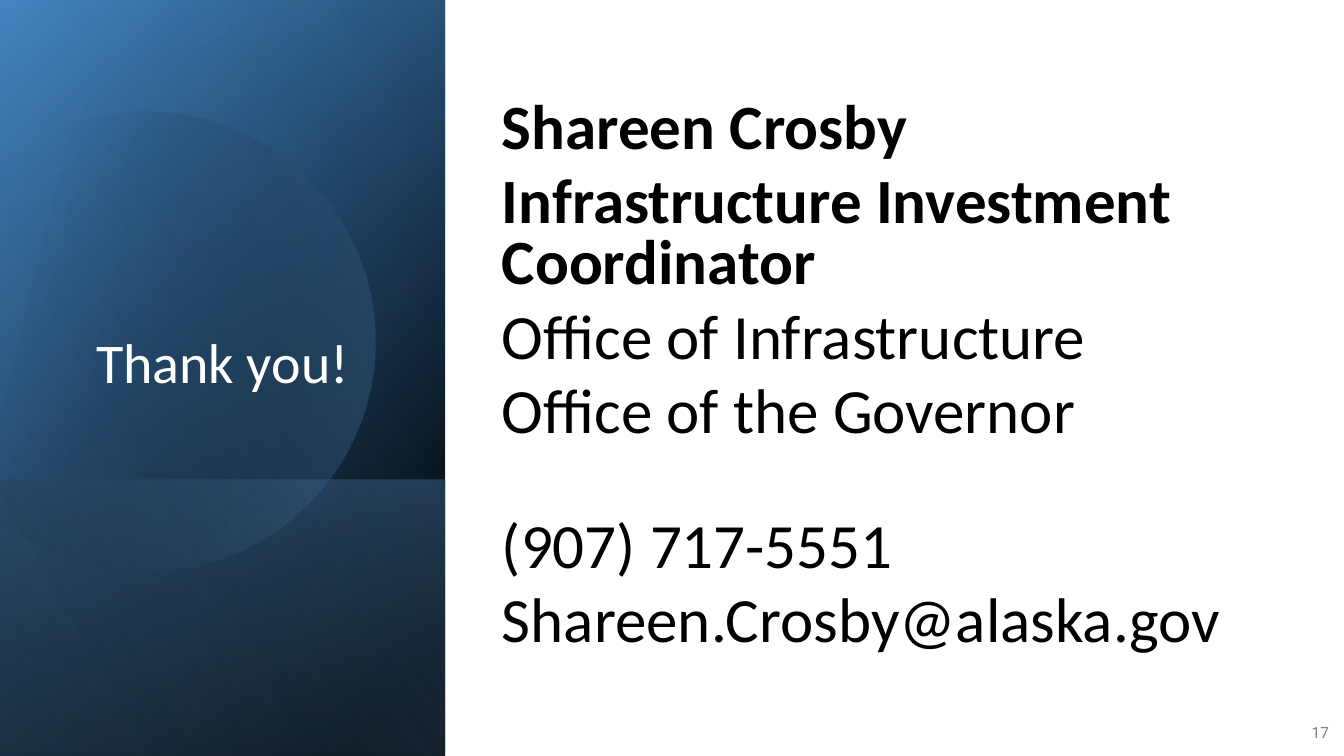
from math import cos, radians, sin

from lxml import etree
from pptx import Presentation
from pptx.dml.color import RGBColor
from pptx.enum.shapes import MSO_SHAPE
from pptx.enum.text import MSO_ANCHOR, MSO_AUTO_SIZE, PP_ALIGN
from pptx.oxml.ns import qn
from pptx.util import Pt

RECT = MSO_SHAPE.RECTANGLE
MIDDLE, BOTTOM = MSO_ANCHOR.MIDDLE, MSO_ANCHOR.BOTTOM
LEFT, CENTER, RIGHT = PP_ALIGN.LEFT, PP_ALIGN.CENTER, PP_ALIGN.RIGHT
NO_AUTOFIT = MSO_AUTO_SIZE.NONE
TITLE_ONLY = 5

BLACK = RGBColor(0x00, 0x00, 0x00)
WHITE = RGBColor(0xFF, 0xFF, 0xFF)
GRAY = RGBColor(0x80, 0x80, 0x80)
DEEP_BLUE = RGBColor(0x2E, 0x75, 0xB6)
BLUE = RGBColor(0x5B, 0x9B, 0xD5)
PALE_BLUE = RGBColor(0x9D, 0xC3, 0xE6)

EMU_PER_PX = 914400 / 100.8
SLIDE_W, SLIDE_H = 1344, 756
SIDEBAR_W = 445
BAND_TOP = 480

# top of panel, gradient stops (percent, colour, opacity percent), angle
BASE_PANELS = [
    (0, [(8, BLACK, 100), (100, DEEP_BLUE, 100)], 50),
    (0, [(0, BLACK, 0), (99, BLUE, 46)], 30),
    (BAND_TOP, [(2, BLUE, 29), (100, BLACK, 30)], 130),
]
GLAZE_PANEL = (0, [(0, BLACK, 0), (99, PALE_BLUE, 11)], 120)

DISC_RADIUS = 230
DISC_ANGLES = [-118, -90, 0, 90, 150]
DISC_STOPS = [(29, BLACK, 0), (100, BLUE, 43)]

# text, bold, space before in points
CONTACT_LINES = [
    ("Shareen Crosby", True, 10),
    ("Infrastructure Investment Coordinator", True, 10),
    ("Office of Infrastructure", False, 10),
    ("Office of the Governor", False, 10),
    ("(907) 717-5551", False, 53),
    ("Shareen.Crosby@alaska.gov", False, 10),
]


def px(length):
    return round(length * EMU_PER_PX)


def apply(target, values):
    for name, value in values.items():
        setattr(target, name, value)


def place(shape, left, top, width, height):
    apply(shape, {"left": px(left), "top": px(top),
                  "width": px(width), "height": px(height)})


def set_plain(shape):
    shape.shadow.inherit = False
    shape.line.fill.background()


def set_gradient(shape, stops, angle):
    """Fill with a linear gradient whose stops have their own opacity."""
    shape.fill.gradient()
    grad = shape._element.spPr.find(qn("a:gradFill"))
    grad.set("rotWithShape", "1")
    for child in list(grad):
        grad.remove(child)
    stop_list = etree.SubElement(grad, qn("a:gsLst"))
    for percent, color, opacity in stops:
        stop = etree.SubElement(stop_list, qn("a:gs"), pos=str(percent * 1000))
        rgb = etree.SubElement(stop, qn("a:srgbClr"), val=str(color))
        if opacity < 100:
            etree.SubElement(rgb, qn("a:alpha"), val=str(opacity * 1000))
    etree.SubElement(grad, qn("a:lin"), ang=str(angle * 60000), scaled="0")


def add_background(slide):
    background = slide.shapes.add_shape(RECT, 0, 0, px(SLIDE_W), px(SLIDE_H))
    set_plain(background)
    background.fill.solid()
    background.fill.fore_color.rgb = WHITE


def add_sidebar_panel(slide, top, stops, angle):
    """Add a mirrored, quarter-turned panel from top to the slide's foot."""
    length = SLIDE_H - top
    panel = slide.shapes.add_shape(RECT, 0, 0, 0, 0)
    place(panel, (SIDEBAR_W - length) / 2, top + (length - SIDEBAR_W) / 2,
          length, SIDEBAR_W)
    panel.rotation = 90
    panel._element.spPr.xfrm.set("flipH", "1")
    set_plain(panel)
    set_gradient(panel, stops, angle)


def bend_sides(shape, radius, angles):
    """Turn the sides between the given angles into arcs of one circle."""
    sides = list(shape._element.iter(qn("a:lnTo")))
    for side, start, end in zip(sides, angles, angles[1:]):
        arc = etree.Element(qn("a:arcTo"), wR=str(radius), hR=str(radius),
                            stAng=str(start % 360 * 60000),
                            swAng=str((end - start) * 60000))
        side.getparent().replace(side, arc)


def add_disc(slide):
    """Add the circle cut by a chord, tilted so that the chord is upright."""
    radius = px(DISC_RADIUS)
    corners = [(round(radius * cos(radians(a))), round(radius * sin(radians(a))))
               for a in DISC_ANGLES]
    builder = slide.shapes.build_freeform(*corners[0])
    builder.add_line_segments(corners[1:], close=True)
    disc = builder.convert_to_shape()
    bend_sides(disc, radius, DISC_ANGLES)
    place(disc, -55, 107, 430, 460)
    disc.rotation = 343.9
    set_plain(disc)
    set_gradient(disc, DISC_STOPS, 30)


def set_frame(shape, anchor):
    apply(shape.text_frame, {"word_wrap": True, "auto_size": NO_AUTOFIT,
                             "vertical_anchor": anchor})


def write_line(paragraph, text, color, font, spacing):
    run = paragraph.add_run()
    run.text = text
    run.font.color.rgb = color
    apply(run.font, font)
    apply(paragraph, spacing)


def add_title(slide):
    title = slide.shapes.title
    slide.shapes._spTree.append(title._element)
    place(title, 46, 198, 353, 203)
    set_frame(title, BOTTOM)
    write_line(title.text_frame.paragraphs[0], "Thank you!", WHITE,
               {"name": "Calibri", "size": Pt(40)},
               {"alignment": CENTER, "line_spacing": 0.9})


def add_contact(slide):
    contact = slide.shapes.add_textbox(0, 0, 0, 0)
    place(contact, 492, 72, 762, 612)
    set_frame(contact, MIDDLE)
    frame = contact.text_frame
    for index, (text, bold, before) in enumerate(CONTACT_LINES):
        paragraph = frame.add_paragraph() if index else frame.paragraphs[0]
        write_line(paragraph, text, BLACK,
                   {"name": "Calibri", "size": Pt(45), "bold": bold},
                   {"alignment": LEFT, "line_spacing": 0.8,
                    "space_before": Pt(before)})


def add_page_number(slide):
    number = slide.shapes.add_textbox(0, 0, 0, 0)
    place(number, 1290, 712, 49, 40)
    set_frame(number, MIDDLE)
    write_line(number.text_frame.paragraphs[0], "17", GRAY,
               {"name": "Roboto", "size": Pt(11)},
               {"alignment": RIGHT, "space_after": Pt(6)})


def main():
    deck = Presentation()
    apply(deck, {"slide_width": px(SLIDE_W), "slide_height": px(SLIDE_H)})
    slide = deck.slides.add_slide(deck.slide_layouts[TITLE_ONLY])
    add_background(slide)
    for panel in BASE_PANELS:
        add_sidebar_panel(slide, *panel)
    add_disc(slide)
    add_sidebar_panel(slide, *GLAZE_PANEL)
    add_title(slide)
    add_contact(slide)
    add_page_number(slide)
    deck.save("out.pptx")


if __name__ == "__main__":
    main()
